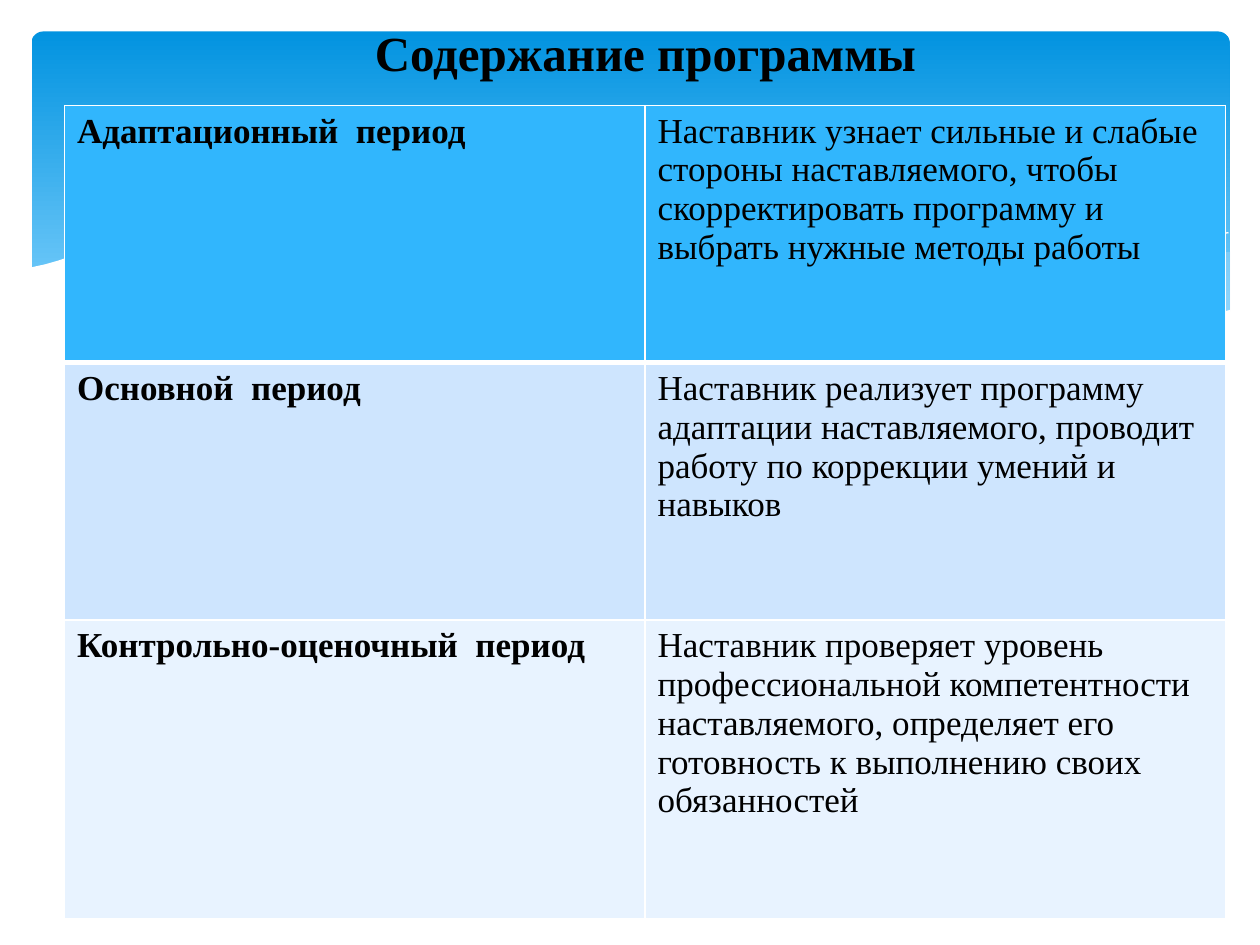
"""Build a slide with a table of the three periods of a mentoring programme."""
from lxml import etree
from pptx import Presentation
from pptx.dml.color import RGBColor
from pptx.enum.shapes import MSO_SHAPE
from pptx.enum.text import PP_ALIGN
from pptx.oxml.ns import qn
from pptx.util import Pt

ROUND = MSO_SHAPE.ROUNDED_RECTANGLE
CENTER = PP_ALIGN.CENTER

TITLE = "Содержание программы"
ROWS = [
    ("Адаптационный  период",
     "Наставник узнает сильные и слабые стороны наставляемого, чтобы "
     "скорректировать программу и выбрать нужные методы работы"),
    ("Основной  период",
     "Наставник реализует программу адаптации наставляемого, проводит "
     "работу по коррекции умений и навыков"),
    ("Контрольно-оценочный  период",
     "Наставник проверяет уровень профессиональной компетентности "
     "наставляемого, определяет его готовность к выполнению своих обязанностей"),
]
THEME = {
    "font": "Times New Roman", "title": 28, "body": 20,
    "ink": "000000", "white": "FFFFFF", "mist": "C6E7FC",
    "sky": [(0, "0293E0"), (0.9, "83D3FE")],
    "rows": ["31B6FD", "CEE5FE", "E8F3FF"],
}
HEIGHTS = [147, 147, 171]
COL = 331.7

RIGHT = [
    (702, 144), (693, 145), (673, 149), (652, 153), (631, 158), (620, 161),
    (580, 170), (542, 179), (508, 185), (476, 191), (508, 195), (545, 199),
    (578, 200), (608, 199), (634, 197), (657, 193), (678, 187), (702, 178),
    (703, 178), (703, 144),
]
MIDDLE = [
    (643, 197), (602, 191), (558, 183), (508, 173), (453, 160), (420, 152),
    (390, 146), (361, 141), (335, 138), (302, 135), (274, 133), (248, 134),
    (225, 135), (206, 138), (233, 141), (261, 146), (291, 152), (323, 160),
    (382, 173), (433, 184), (468, 190), (500, 194), (529, 198), (556, 200),
    (588, 200), (617, 199),
]
FALL = [
    (222, 140), (241, 138), (269, 135), (300, 135), (338, 136), (384, 140),
    (438, 147), (500, 158), (572, 174), (626, 188), (653, 196),
]
RISE = [
    (441, 185), (470, 177), (500, 169), (539, 161), (580, 151), (624, 143),
    (655, 138), (684, 135), (702, 133),
]
FRONT = [
    (703, 177), (681, 184), (655, 192), (621, 197), (583, 199), (535, 197),
    (481, 191), (417, 180), (342, 163), (322, 158), (281, 149), (245, 142),
    (210, 137), (180, 134), (152, 132), (127, 132), (105, 133), (86, 135),
    (68, 139), (55, 142), (42, 146), (33, 149), (26, 151), (17, 153),
    (17, 237), (703, 237),
]
WAVES = [
    (RIGHT, "mist", 29), (MIDDLE, "mist", 40), (FALL, None, 0),
    (RISE, None, 0), (FRONT, "white", 100),
]


def tint(name):
    return RGBColor.from_string(THEME.get(name, name))


def style(para, size, bold):
    font = para.font
    font.name, font.size, font.bold = THEME["font"], Pt(THEME[size]), bold
    font.color.rgb = tint("ink")


def add_sky(slide):
    sky = slide.shapes.add_shape(ROUND, Pt(18), Pt(18), Pt(684.7), Pt(194.4))
    sky.adjustments[0] = 0.034
    sky.shadow.inherit = False
    sky.line.fill.background()
    sky.fill.gradient()
    sky.fill.gradient_angle = 270
    for stop, (place, color) in zip(sky.fill.gradient_stops, THEME["sky"]):
        stop.position, stop.color.rgb = place, tint(color)


def add_wave(slide, points, color, alpha):
    pen = slide.shapes.build_freeform(*points[0], scale=Pt(1))
    pen.add_line_segments(points[1:], close=color is not None)
    wave = pen.convert_to_shape()
    wave.shadow.inherit = False
    if color is None:
        wave.fill.background()
        wave.line.color.rgb = tint("white")
        wave.line.width = Pt(0)
        return
    wave.line.fill.background()
    wave.fill.solid()
    wave.fill.fore_color.rgb = tint(color)
    if alpha < 100:
        mark = next(wave.element.spPr.iter(qn("a:srgbClr")))
        etree.SubElement(mark, qn("a:alpha"), val=str(alpha * 1000))


def add_edges(cell, top, bottom):
    props = cell._tc.get_or_add_tcPr()
    for i, (side, width) in enumerate(
            [("L", 1), ("R", 1), ("T", top), ("B", bottom)]):
        edge = etree.Element(qn("a:ln" + side), w=str(Pt(width)))
        fill = etree.SubElement(edge, qn("a:solidFill"))
        etree.SubElement(fill, qn("a:srgbClr"), val=THEME["white"])
        props.insert(i, edge)


def add_grid(slide):
    grid = slide.shapes.add_table(
        len(ROWS), 2, Pt(36.9), Pt(60.3), Pt(2 * COL), Pt(sum(HEIGHTS))).table
    for col in grid.columns:
        col.width = Pt(COL)
    for i, texts in enumerate(ROWS):
        grid.rows[i].height = Pt(HEIGHTS[i])
        for j, text in enumerate(texts):
            cell = grid.cell(i, j)
            cell.text = text
            style(cell.text_frame.paragraphs[0], "body", j == 0)
            cell.fill.solid()
            cell.fill.fore_color.rgb = tint(THEME["rows"][i])
            add_edges(cell, 3 if i == 1 else 1, 3 if i == 0 else 1)


def add_title(slide):
    box = slide.shapes.add_textbox(Pt(99.4), Pt(9.4), Pt(538.6), Pt(41))
    box.text_frame.word_wrap = True
    para = box.text_frame.paragraphs[0]
    para.text, para.alignment = TITLE, CENTER
    style(para, "title", True)


def main():
    deck = Presentation()
    deck.slide_width, deck.slide_height = Pt(720), Pt(540)
    slide = deck.slides.add_slide(deck.slide_layouts[6])
    add_sky(slide)
    for wave in WAVES:
        add_wave(slide, *wave)
    add_grid(slide)
    add_title(slide)
    deck.save("out.pptx")


if __name__ == "__main__":
    main()
